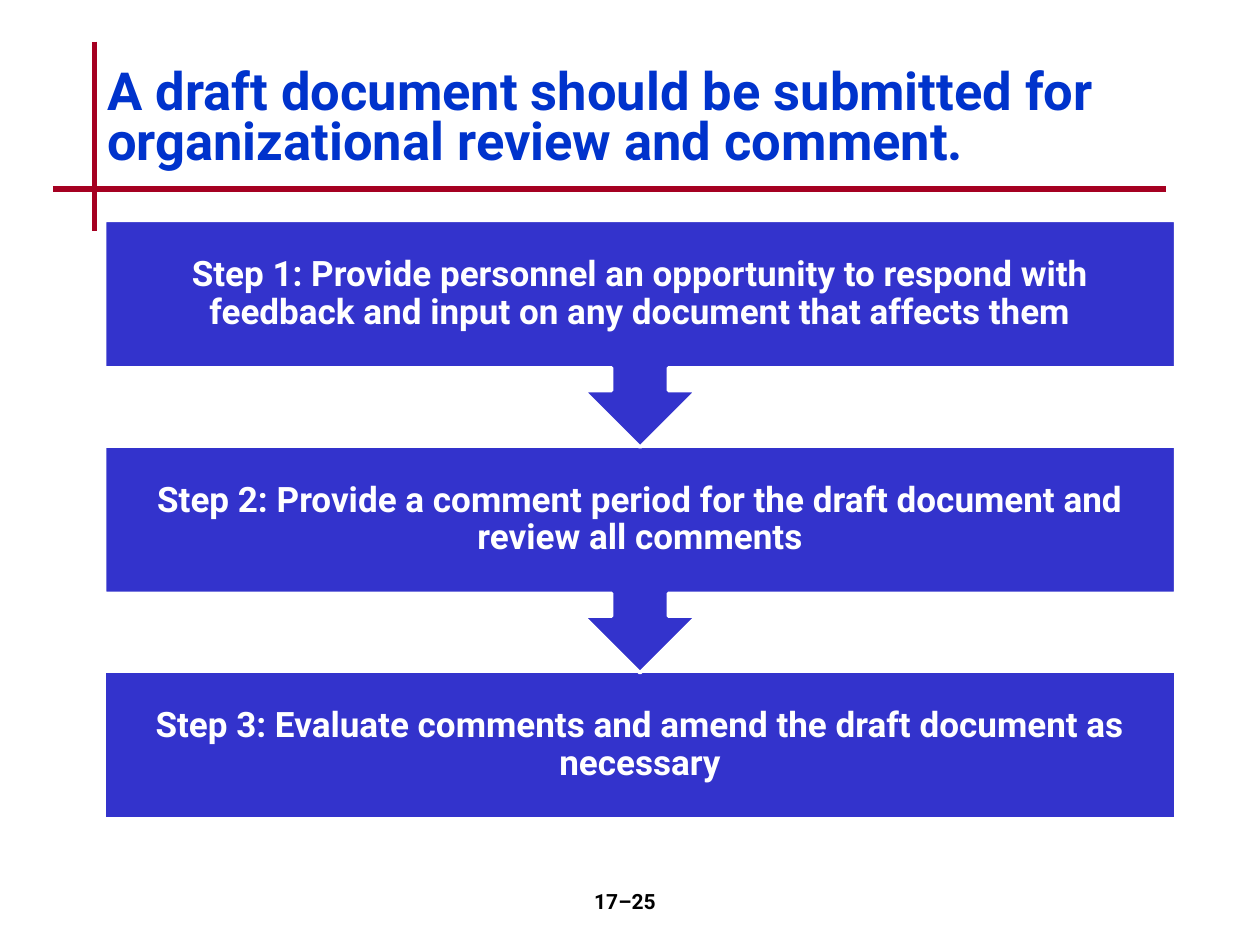
from dataclasses import dataclass

from lxml.etree import SubElement
from pptx import Presentation
from pptx.dml.color import RGBColor
from pptx.enum.shapes import MSO_CONNECTOR, MSO_SHAPE
from pptx.enum.text import MSO_ANCHOR as Anchor, MSO_AUTO_SIZE, PP_ALIGN as Align
from pptx.oxml.ns import qn
from pptx.util import Inches, Pt


@dataclass(frozen=True)
class Theme:
    font: str = "Roboto"
    heading: str = "0033CC"
    rule: str = "A50021"
    box: str = "3333CC"
    light: str = "FFFFFF"
    dark: str = "000000"
    title_size: int = 30
    step_size: int = 20
    page_size: int = 12
    rule_width: int = 3
    outline_width: int = 2


class SlideBuilder:
    def __init__(self, slide, theme):
        self.slide = slide
        self.theme = theme

    def set_text(self, frame, text, size, color, align, spacing=1.0, anchor=Anchor.MIDDLE):
        frame.text = text
        frame.word_wrap = True
        frame.auto_size = MSO_AUTO_SIZE.NONE
        frame.vertical_anchor = anchor
        paragraph = frame.paragraphs[0]
        paragraph.alignment = align
        paragraph.line_spacing = spacing
        paragraph.space_before = Pt(0)
        font = paragraph.runs[0].font
        font.name, font.size, font.bold = self.theme.font, Pt(size), True
        font.color.rgb = RGBColor.from_string(color)

    def title(self, text, left, top, width, height):
        title = self.slide.shapes.title
        title.left, title.top = Inches(left), Inches(top)
        title.width, title.height = Inches(width), Inches(height)
        self.set_text(title.text_frame, text, self.theme.title_size,
                      self.theme.heading, Align.LEFT, 0.8)

    def rule(self, x1, y1, x2, y2):
        rule = self.slide.shapes.add_connector(
            MSO_CONNECTOR.STRAIGHT, Inches(x1), Inches(y1), Inches(x2), Inches(y2))
        rule.line.color.rgb = RGBColor.from_string(self.theme.rule)
        rule.line.width = Pt(self.theme.rule_width)
        SubElement(rule._element.spPr, qn("a:effectLst"))

    def step(self, kind, text, left, top, width, height):
        step = self.slide.shapes.add_shape(
            kind, Inches(left), Inches(top), Inches(width), Inches(height))
        step.shadow.inherit = False
        step.fill.solid()
        step.fill.fore_color.rgb = RGBColor.from_string(self.theme.box)
        step.line.color.rgb = RGBColor.from_string(self.theme.light)
        step.line.width = Pt(self.theme.outline_width)
        frame = step.text_frame
        frame.margin_left = frame.margin_right = Inches(0.16)
        frame.margin_top = frame.margin_bottom = Inches(0.16)
        self.set_text(frame, text, self.theme.step_size, self.theme.light,
                      Align.CENTER, 0.9)

    def page_number(self, text, left, top, width, height):
        box = self.slide.shapes.add_textbox(
            Inches(left), Inches(top), Inches(width), Inches(height))
        self.set_text(box.text_frame, text, self.theme.page_size, self.theme.dark,
                      Align.CENTER, anchor=Anchor.TOP)


STEPS = [
    "Step 1: Provide personnel an opportunity to respond with feedback and input "
    "on any document that affects them",
    "Step 2: Provide a comment period for the draft document and review all comments",
    "Step 3: Evaluate comments and amend the draft document as necessary",
]
STEP_LEFT, STEP_TOP, STEP_WIDTH = 0.83, 1.75, 8.5
STEP_PITCH, BOX_HEIGHT, CALLOUT_HEIGHT = 1.79, 1.17, 1.8


def main():
    prs = Presentation()
    prs.slide_width, prs.slide_height = Inches(10), Inches(7.5)
    title_only = prs.slide_layouts[5]
    builder = SlideBuilder(prs.slides.add_slide(title_only), Theme())

    builder.rule(0.75, 0.33, 0.75, 1.83)
    builder.rule(0.42, 1.5, 9.25, 1.5)
    builder.title("A draft document should be submitted for organizational review "
                  "and comment.", 0.75, 0.33, 8.5, 1.25)

    # Last step first, so that each arrow tip lies over the box below it.
    last = len(STEPS) - 1
    for index, text in reversed(list(enumerate(STEPS))):
        if index == last:
            kind, height = MSO_SHAPE.RECTANGLE, BOX_HEIGHT
        else:
            kind, height = MSO_SHAPE.DOWN_ARROW_CALLOUT, CALLOUT_HEIGHT
        builder.step(kind, text, STEP_LEFT, STEP_TOP + index * STEP_PITCH,
                     STEP_WIDTH, height)

    builder.page_number("17–25", 3.92, 7, 2.08, 0.5)
    prs.save("out.pptx")


if __name__ == "__main__":
    main()
